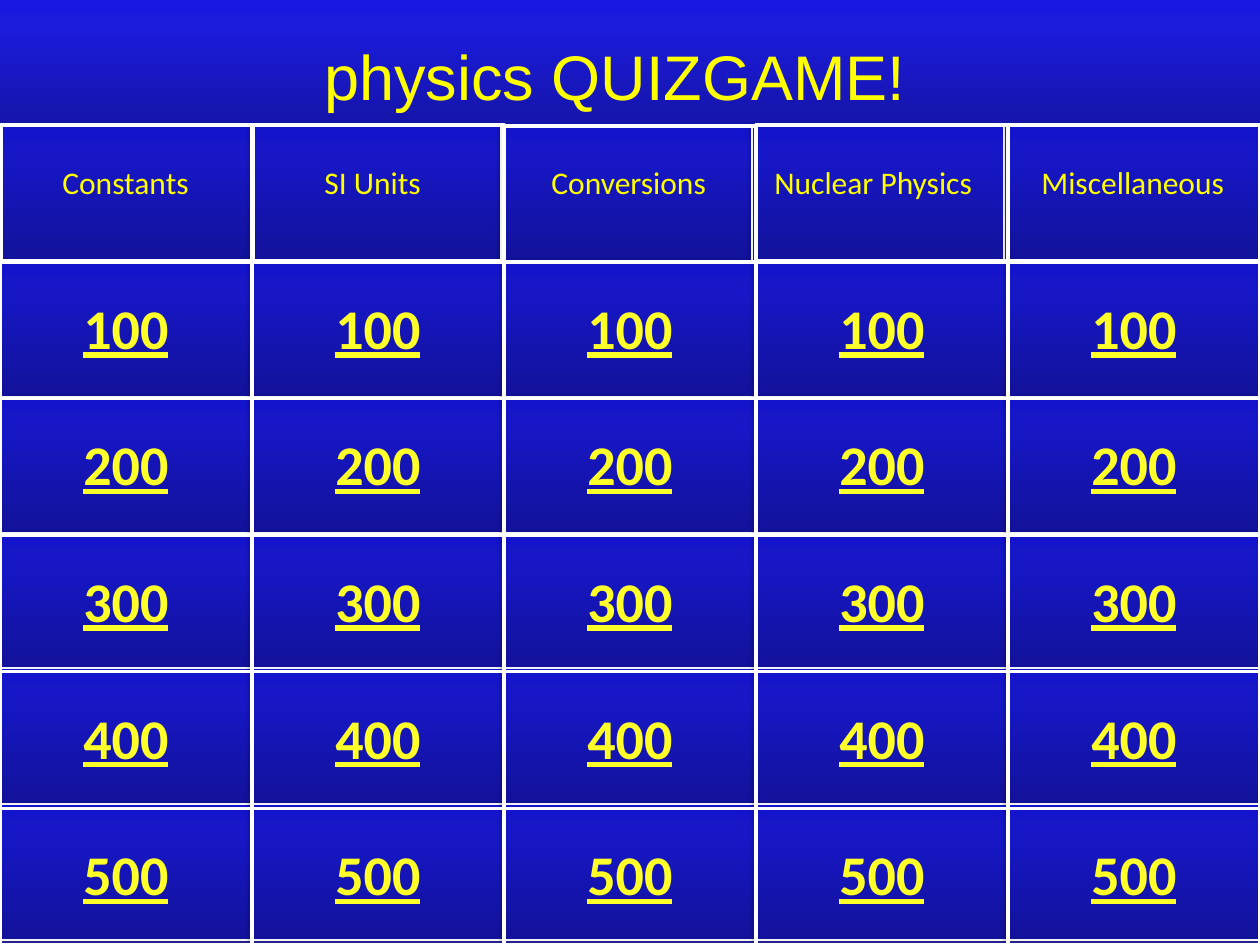
from dataclasses import dataclass

from lxml.etree import SubElement
from pptx import Presentation
from pptx.dml.color import RGBColor
from pptx.enum.shapes import MSO_SHAPE as Shape
from pptx.enum.text import MSO_ANCHOR as Anchor, MSO_AUTO_SIZE as AutoSize, PP_ALIGN as Align
from pptx.oxml import parse_xml
from pptx.oxml.ns import nsdecls, qn
from pptx.util import Emu, Pt

# Content
TITLE = "physics QUIZGAME!"
# category, label left, label width, panel left, outline left, outline top
CATEGORIES = [
    ("Constants", 50, 152, 0, 1, 125),
    ("SI Units", 312, 122, 251, 252, 125),
    ("Conversions", 539, 181, 501, 504, 126),
    ("Nuclear Physics", 762, 226, 752, 756, 125),
    ("Miscellaneous", 1029, 209, 1008, 1008, 125),
]
POINTS = [100, 200, 300, 400, 500]

# Layout in px
SLIDE_W, SLIDE_H = 1260, 945
HEADER_TOP, PANELS_TOP, TABLE_TOP = 125, 261, 262
LAST_PANEL_TOP = 804
CELL_W, CELL_H = SLIDE_W // len(CATEGORIES), 136


@dataclass(frozen=True)
class Theme:
    background: str = "3333CC"
    banner: tuple = ((0, "1515A9"), (80, "1B1BDC"), (100, "1818E1"))
    panel: tuple = ((0, "12129A"), (80, "1717C8"), (100, "1414CC"))
    panel_line: str = "F2F2F2"
    grid: str = "FFFFFF"
    heading: str = "FFFF00"
    points: str = "FFFF29"
    title_font: str = "Arial"
    body_font: str = "Calibri"
    title_size: int = 36
    points_size: int = 32
    category_size: int = 18
    grid_width: float = 2.25


THEME = Theme()


def px(length):
    return Emu(round(length * 914400 / 126))


def write(frame, text, *, size, color, font=THEME.body_font, align=Align.LEFT,
          bold=False, underline=False, before=0):
    paragraph = frame.paragraphs[0]
    paragraph.alignment = align
    paragraph.space_before = Pt(before)
    run = paragraph.add_run()
    run.text = text
    run.font.size, run.font.name = Pt(size), font
    run.font.bold, run.font.underline = bold, underline
    run.font.color.rgb = RGBColor.from_string(color)


def add_label(slide, text, left, top, width, height, **text_format):
    frame = slide.shapes.add_textbox(px(left), px(top), px(width), px(height)).text_frame
    frame.word_wrap = False
    frame.auto_size = AutoSize.NONE
    write(frame, text, **text_format)


def add_rect(shapes, left, top, width, height, line=None, line_width=1):
    rect = shapes.add_shape(Shape.RECTANGLE, px(left), px(top), px(width), px(height))
    rect.shadow.inherit = False
    rect.fill.background()
    if line:
        rect.line.color.rgb = RGBColor.from_string(line)
        rect.line.width = Pt(line_width)
    else:
        rect.line.fill.background()
    return rect


def add_panel(shapes, left, top, width, height, stops, line=None):
    rect = add_rect(shapes, left, top, width, height, line)
    properties = rect.element.spPr
    stop_xml = "".join(
        f'<a:gs pos="{at * 1000}"><a:srgbClr val="{color}"/></a:gs>' for at, color in stops)
    gradient = parse_xml(
        f'<a:gradFill {nsdecls("a")} rotWithShape="1"><a:gsLst>{stop_xml}</a:gsLst>'
        '<a:lin ang="16200000" scaled="0"/></a:gradFill>')
    properties.replace(properties.find(qn("a:noFill")), gradient)
    shadow = SubElement(properties.find(qn("a:effectLst")), qn("a:outerShdw"),
                        blurRad=str(Pt(3.1)), dist=str(Pt(1.8)), dir="5400000", rotWithShape="0")
    black = SubElement(shadow, qn("a:srgbClr"), val="000000")
    SubElement(black, qn("a:alpha"), val="35000")


def add_borders(cell):
    properties = cell._tc.get_or_add_tcPr()
    for index, side in enumerate(("lnL", "lnR", "lnT", "lnB")):
        properties.insert(index, parse_xml(
            f'<a:{side} {nsdecls("a")} w="{Pt(THEME.grid_width)}"><a:solidFill>'
            f'<a:srgbClr val="{THEME.grid}"/></a:solidFill></a:{side}>'))


def add_points_table(slide):
    table = slide.shapes.add_table(
        len(POINTS), len(CATEGORIES), 0, px(TABLE_TOP), px(SLIDE_W), px(SLIDE_H - TABLE_TOP)).table
    table.first_row = table.horz_banding = False
    for row, value in zip(table.rows, POINTS):
        for cell in row.cells:
            cell.fill.background()
            cell.vertical_anchor = Anchor.MIDDLE
            write(cell.text_frame, str(value), size=THEME.points_size, color=THEME.points,
                  align=Align.CENTER, bold=True, underline=True, before=6.4)
            add_borders(cell)


def main():
    deck = Presentation()
    deck.slide_width, deck.slide_height = px(SLIDE_W), px(SLIDE_H)
    slide = deck.slides.add_slide(deck.slide_layouts[6])
    slide.background.fill.solid()
    slide.background.fill.fore_color.rgb = RGBColor.from_string(THEME.background)

    # Banner, category panels and title
    add_panel(slide.shapes, 0, 0, SLIDE_W, 126, THEME.banner)
    for _, _, _, panel_left, _, _ in CATEGORIES:
        add_panel(slide.shapes, panel_left, HEADER_TOP, CELL_W, CELL_H,
                  THEME.panel, THEME.panel_line)
    add_label(slide, TITLE, 53, 31, 1124, 73, size=THEME.title_size,
              color=THEME.heading, font=THEME.title_font, align=Align.CENTER)

    # Board: one group of panels per category, under the points table
    row_step = (LAST_PANEL_TOP - PANELS_TOP) / (len(POINTS) - 1)
    for column in range(len(CATEGORIES)):
        group = slide.shapes.add_group_shape()
        for row in range(len(POINTS)):
            add_panel(group.shapes, column * CELL_W - 1, PANELS_TOP + row * row_step,
                      CELL_W, CELL_H, THEME.panel, THEME.panel_line)
    add_points_table(slide)

    # Category names and their outlines
    for name, left, width, _, _, _ in CATEGORIES:
        add_label(slide, name, left, 157, width, 50,
                  size=THEME.category_size, color=THEME.heading)
    for _, _, _, _, left, top in CATEGORIES:
        add_rect(slide.shapes, left, top, CELL_W, CELL_H, THEME.grid, THEME.grid_width)

    deck.save("out.pptx")


if __name__ == "__main__":
    main()
